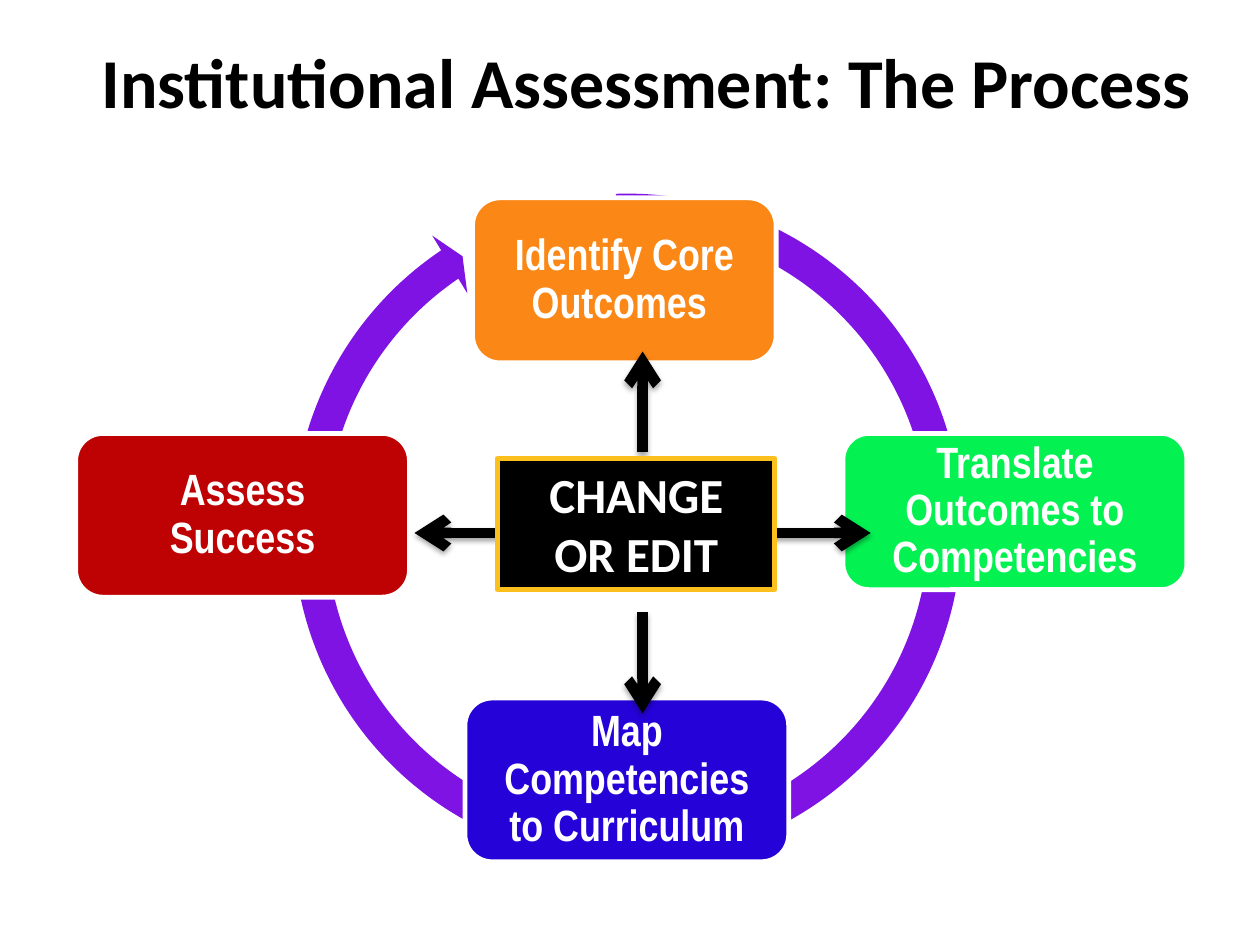
from dataclasses import dataclass

from lxml import etree
from pptx import Presentation
from pptx.dml.color import RGBColor
from pptx.enum.shapes import MSO_CONNECTOR, MSO_SHAPE
from pptx.enum.text import MSO_ANCHOR, PP_ALIGN
from pptx.oxml import parse_xml
from pptx.oxml.ns import nsdecls, qn
from pptx.util import Inches, Pt

COLORS = {
    "black": "000000", "white": "FFFFFF", "ring": "7E13E3", "orange": "FA8716",
    "green": "04F152", "blue": "2503D8", "red": "BE0204", "gold": "FBC01E",
}
STAGE_FONT = {"name": "Arial Narrow", "size": Pt(25), "bold": True}
CENTER_FONT = {"name": "Calibri", "size": Pt(28), "bold": True}
TITLE_FONT = {"name": "Calibri", "size": Pt(40), "bold": True}
DEGREE = 0.6


@dataclass
class Box:
    text: str
    left: float
    top: float
    width: float
    height: float
    fill: str
    line: str = "white"
    preset: MSO_SHAPE = MSO_SHAPE.ROUNDED_RECTANGLE


@dataclass
class Arrow:
    start: tuple[float, float]
    end: tuple[float, float]


STAGES = [
    Box("Identify Core Outcomes ", 3.75, 1.57, 2.41, 1.31, "orange"),
    Box("Translate Outcomes to Competencies", 6.69, 3.44, 2.73, 1.24, "green"),
    Box("Map Competencies to Curriculum", 3.69, 5.54, 2.57, 1.3, "blue"),
    Box("Assess Success", 0.6, 3.44, 2.65, 1.3, "red"),
]
CENTER = Box("CHANGE\nOR EDIT", 3.95, 3.64, 2.2, 1.04, "black", "gold", MSO_SHAPE.RECTANGLE)
ARROWS = [
    Arrow((4.14, 4.23), (3.29, 4.23)),
    Arrow((5.1, 3.59), (5.1, 2.79)),
    Arrow((5.1, 4.86), (5.1, 5.66)),
    Arrow((6.07, 4.23), (6.91, 4.23)),
]


def color(name: str) -> RGBColor:
    return RGBColor.from_string(COLORS[name])


def write_text(shape, text: str, font: dict, font_color: str, anchor: MSO_ANCHOR,
               spacing: float = 1.0, inset: tuple[float, float] = (0.1, 0.05)) -> None:
    frame = shape.text_frame
    horizontal, vertical = map(Inches, inset)
    settings = {
        "word_wrap": True, "vertical_anchor": anchor,
        "margin_left": horizontal, "margin_right": horizontal,
        "margin_top": vertical, "margin_bottom": vertical,
    }
    for name, value in settings.items():
        setattr(frame, name, value)
    frame.text = text
    for paragraph in frame.paragraphs:
        paragraph.alignment = PP_ALIGN.CENTER
        paragraph.line_spacing = spacing
        for run in paragraph.runs:
            for name, value in font.items():
                setattr(run.font, name, value)
            run.font.color.rgb = color(font_color)


def draw_title(slide) -> None:
    title = slide.shapes.add_textbox(Inches(0.26), Inches(0.06), Inches(9.74), Inches(0.96))
    write_text(title, "Institutional Assessment: The Process", TITLE_FONT, "black",
               MSO_ANCHOR.BOTTOM)


def draw_ring(slide) -> None:
    ring = slide.shapes.add_shape(MSO_SHAPE.CIRCULAR_ARROW, Inches(2.19), Inches(1.4),
                                  Inches(5.58), Inches(5.58))
    adjustments = (0.047, 2.73 * DEGREE, 236 * DEGREE, 268 * DEGREE, 0.048)
    for index, value in enumerate(adjustments):
        ring.adjustments[index] = value
    ring.shadow.inherit = False
    ring.fill.solid()
    ring.fill.fore_color.rgb = color("ring")
    ring.line.fill.background()


def draw_box(slide, box: Box):
    shape = slide.shapes.add_shape(box.preset, Inches(box.left), Inches(box.top),
                                   Inches(box.width), Inches(box.height))
    shape.shadow.inherit = False
    shape.fill.solid()
    shape.fill.fore_color.rgb = color(box.fill)
    shape.line.color.rgb = color(box.line)
    shape.line.width = Pt(2.75)
    return shape


def draw_arrow(slide, arrow: Arrow) -> None:
    connector = slide.shapes.add_connector(MSO_CONNECTOR.STRAIGHT,
                                           *map(Inches, arrow.start + arrow.end))
    connector.line.color.rgb = color("black")
    connector.line.width = Pt(6)
    etree.SubElement(connector.line._get_or_add_ln(), qn("a:tailEnd"), type="arrow")
    connector._element.spPr.append(parse_xml(
        f'<a:effectLst {nsdecls("a")}>'
        f'<a:outerShdw blurRad="{Pt(3.1)}" dist="{Pt(1.8)}" dir="5400000" rotWithShape="0">'
        f'<a:srgbClr val="{COLORS["black"]}"><a:alpha val="35000"/></a:srgbClr>'
        '</a:outerShdw></a:effectLst>'))


def main() -> None:
    presentation = Presentation()
    presentation.slide_width = Inches(10)
    presentation.slide_height = Inches(7.5)
    slide = presentation.slides.add_slide(presentation.slide_layouts[6])
    draw_title(slide)
    draw_ring(slide)
    for stage in STAGES:
        shape = draw_box(slide, stage)
        write_text(shape, stage.text, STAGE_FONT, "white", MSO_ANCHOR.MIDDLE, 0.9, (0.16, 0.1))
    for arrow in ARROWS:
        draw_arrow(slide, arrow)
    write_text(draw_box(slide, CENTER), CENTER.text, CENTER_FONT, "white", MSO_ANCHOR.TOP)
    presentation.save("out.pptx")


if __name__ == "__main__":
    main()
